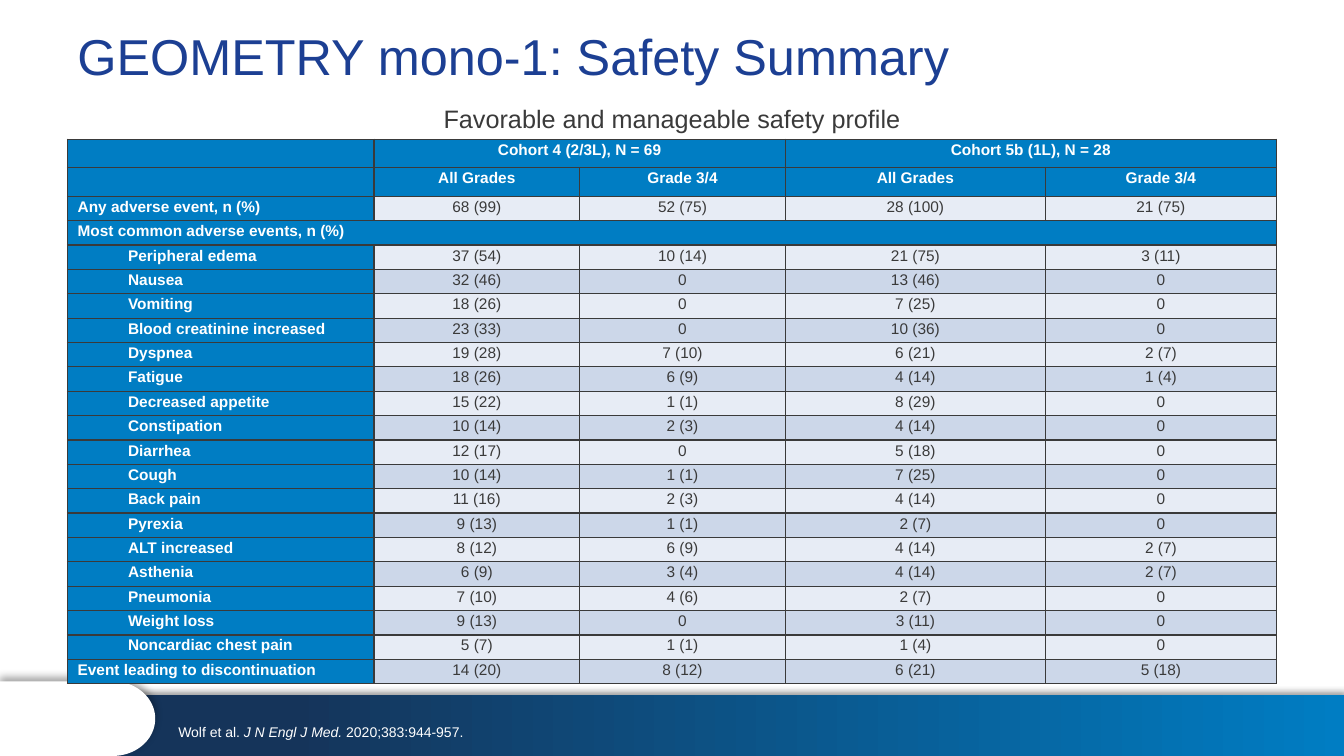
"""Build the GEOMETRY mono-1 safety summary slide."""
import math

import lxml.etree
import pptx
import pptx.dml.color
import pptx.enum.shapes
import pptx.enum.text
import pptx.oxml.ns
import pptx.util

Inches, Pt = pptx.util.Inches, pptx.util.Pt
ALIGN, ANCHOR = pptx.enum.text.PP_ALIGN, pptx.enum.text.MSO_ANCHOR
BLUE, NAVY, WHITE, INK = "007DC3", "15345A", "FFFFFF", "3A3A3A"
BANDS = ("E7ECF5", "CCD7E9")
COLUMN_WIDTHS = (3.04, 2.04, 2.04, 2.58, 2.29)
HEADER_ROWS = 2
SECTION = "Most common adverse events, n (%)"
UNINDENTED = ("Any adverse event, n (%)", SECTION, "Event leading to discontinuation")
ROWS = (
    ("", "Cohort 4 (2/3L), N = 69", "", "Cohort 5b (1L), N = 28", ""),
    ("", "All Grades", "Grade 3/4", "All Grades", "Grade 3/4"),
    ("Any adverse event, n (%)", "68 (99)", "52 (75)", "28 (100)", "21 (75)"),
    (SECTION, "", "", "", ""),
    ("Peripheral edema", "37 (54)", "10 (14)", "21 (75)", "3 (11)"),
    ("Nausea", "32 (46)", "0", "13 (46)", "0"),
    ("Vomiting", "18 (26)", "0", "7 (25)", "0"),
    ("Blood creatinine increased", "23 (33)", "0", "10 (36)", "0"),
    ("Dyspnea", "19 (28)", "7 (10)", "6 (21)", "2 (7)"),
    ("Fatigue", "18 (26)", "6 (9)", "4 (14)", "1 (4)"),
    ("Decreased appetite", "15 (22)", "1 (1)", "8 (29)", "0"),
    ("Constipation", "10 (14)", "2 (3)", "4 (14)", "0"),
    ("Diarrhea", "12 (17)", "0", "5 (18)", "0"),
    ("Cough", "10 (14)", "1 (1)", "7 (25)", "0"),
    ("Back pain", "11 (16)", "2 (3)", "4 (14)", "0"),
    ("Pyrexia", "9 (13)", "1 (1)", "2 (7)", "0"),
    ("ALT increased", "8 (12)", "6 (9)", "4 (14)", "2 (7)"),
    ("Asthenia", "6 (9)", "3 (4)", "4 (14)", "2 (7)"),
    ("Pneumonia", "7 (10)", "4 (6)", "2 (7)", "0"),
    ("Weight loss", "9 (13)", "0", "3 (11)", "0"),
    ("Noncardiac chest pain", "5 (7)", "1 (1)", "1 (4)", "0"),
    ("Event leading to discontinuation", "14 (20)", "8 (12)", "6 (21)", "5 (18)"),
)


def color(value):
    """Turn a hex string into a colour."""
    return pptx.dml.color.RGBColor.from_string(value)


def add_child(parent, tag, **attributes):
    """Append a DrawingML element with the given attributes."""
    child = lxml.etree.SubElement(parent, pptx.oxml.ns.qn(tag))
    for name, value in attributes.items():
        child.set(name, str(value))
    return child


def set_font(para, size, value, bold=False):
    """Set the font of a whole paragraph."""
    para.font.name = "Arial"
    para.font.size = Pt(size)
    para.font.bold = bold
    para.font.color.rgb = color(value)


def cast_shadow(shape, blur, opacity):
    """Give a shape a soft upward shadow and no outline."""
    shape.line.fill.background()
    shape.shadow.inherit = False
    effects = shape._element.spPr.find(pptx.oxml.ns.qn("a:effectLst"))
    shadow = add_child(effects, "a:outerShdw", blurRad=Pt(blur), dist=Pt(3),
                       dir=270 * 60000, algn="b", rotWithShape=0)
    black = add_child(shadow, "a:srgbClr", val="000000")
    add_child(black, "a:alpha", val=opacity * 1000)


def add_footer_band(page):
    """Draw the gradient band along the bottom edge."""
    band = page.shapes.add_shape(pptx.enum.shapes.MSO_SHAPE.RECTANGLE, Inches(1.16),
                                 Inches(6.9), Inches(12.18), Inches(0.6))
    band.fill.gradient()
    band.fill.gradient_angle = 180
    for stop, position, value in zip(band.fill.gradient_stops, (0, 0.86), (BLUE, NAVY)):
        stop.position = position
        stop.color.rgb = color(value)
    cast_shadow(band, 4, 40)


def add_footer_tab(page):
    """Draw the white tab with a round right end at the bottom left."""
    center_x, center_y, radius_x, radius_y, steps = 1.12, 7.13, 0.42, 0.37, 48
    angles = [math.pi * (step / steps - 0.5) for step in range(steps + 1)]
    points = [(Inches(center_x + radius_x * math.cos(angle)),
               Inches(center_y + radius_y * math.sin(angle))) for angle in angles]
    builder = page.shapes.build_freeform(0, Inches(center_y - radius_y))
    builder.add_line_segments(points + [(0, Inches(center_y + radius_y))], close=True)
    tab = builder.convert_to_shape()
    tab.fill.solid()
    tab.fill.fore_color.rgb = color(WHITE)
    cast_shadow(tab, 6.1, 34)


def add_text(page, place, spans, size, value, anchor=ANCHOR.TOP, align=ALIGN.LEFT, spacing=1.0):
    """Add a one-paragraph text box from (text, italic) spans."""
    box = page.shapes.add_textbox(*map(Inches, place))
    box.text_frame.word_wrap = True
    box.text_frame.vertical_anchor = anchor
    para = box.text_frame.paragraphs[0]
    para.alignment = align
    para.line_spacing = spacing
    set_font(para, size, value)
    for text, italic in spans:
        span = para.add_run()
        span.text = text
        if italic:
            span.font.italic = True


def style_cell(cell, fill):
    """Draw the borders of a cell and fill it."""
    properties = cell._tc.get_or_add_tcPr()
    for side in ("a:lnL", "a:lnR", "a:lnT", "a:lnB"):
        line = add_child(properties, side, w=Pt(1))
        add_child(add_child(line, "a:solidFill"), "a:srgbClr", val=INK)
    cell.fill.solid()
    cell.fill.fore_color.rgb = color(fill)


def fill_cell(cell, text, row, column):
    """Write one cell with the style of its row and column."""
    is_label = column == 0
    is_heading = is_label or row < HEADER_ROWS or ROWS[row][0] == SECTION
    style_cell(cell, BLUE if is_heading else BANDS[row % 2])
    para = cell.text_frame.paragraphs[0]
    para.alignment = ALIGN.LEFT if is_label else ALIGN.CENTER
    para.line_spacing = Pt(10.2)
    if is_label and text and text not in UNINDENTED:
        para.level = 1
        para._p.get_or_add_pPr().set("marL", str(Inches(0.5)))
    set_font(para, 11, WHITE if is_heading else INK, is_heading)
    if text:
        para.add_run().text = text


def add_safety_table(page):
    """Add the adverse event table."""
    table = page.shapes.add_table(len(ROWS), len(COLUMN_WIDTHS), Inches(0.67), Inches(1.38),
                                  Inches(sum(COLUMN_WIDTHS)), Inches(5.37)).table
    for column, width in zip(table.columns, COLUMN_WIDTHS):
        column.width = Inches(width)
    for row, texts in enumerate(ROWS):
        table.rows[row].height = Inches(0.27 if row < HEADER_ROWS else 0.24)
        for column, text in enumerate(texts):
            fill_cell(table.cell(row, column), text, row, column)
    section_row = [texts[0] for texts in ROWS].index(SECTION)
    for row, first, last in ((0, 1, 2), (0, 3, 4), (section_row, 0, 4)):
        table.cell(row, first).merge(table.cell(row, last))


def main():
    """Build and save the deck."""
    deck = pptx.Presentation()
    deck.slide_width, deck.slide_height = Inches(13.33), Inches(7.5)
    page = deck.slides.add_slide(deck.slide_layouts[6])
    add_footer_band(page)
    add_footer_tab(page)
    add_text(page, (0.67, 0.25, 11.5, 0.68), [("GEOMETRY mono-1: Safety Summary", False)],
             36, "1C3F93", ANCHOR.MIDDLE, spacing=0.9)
    citation = [("Wolf et al. ", False), ("J N Engl J Med. ", True), ("2020;383:944-957.", False)]
    add_text(page, (1.67, 6.91, 9.4, 0.49), citation, 10, WHITE, ANCHOR.BOTTOM, spacing=0.9)
    add_text(page, (0.67, 0.98, 11.99, 0.38), [("Favorable and manageable safety profile", False)],
             18, INK, align=ALIGN.CENTER)
    add_safety_table(page)
    deck.save("out.pptx")


if __name__ == "__main__":
    main()
